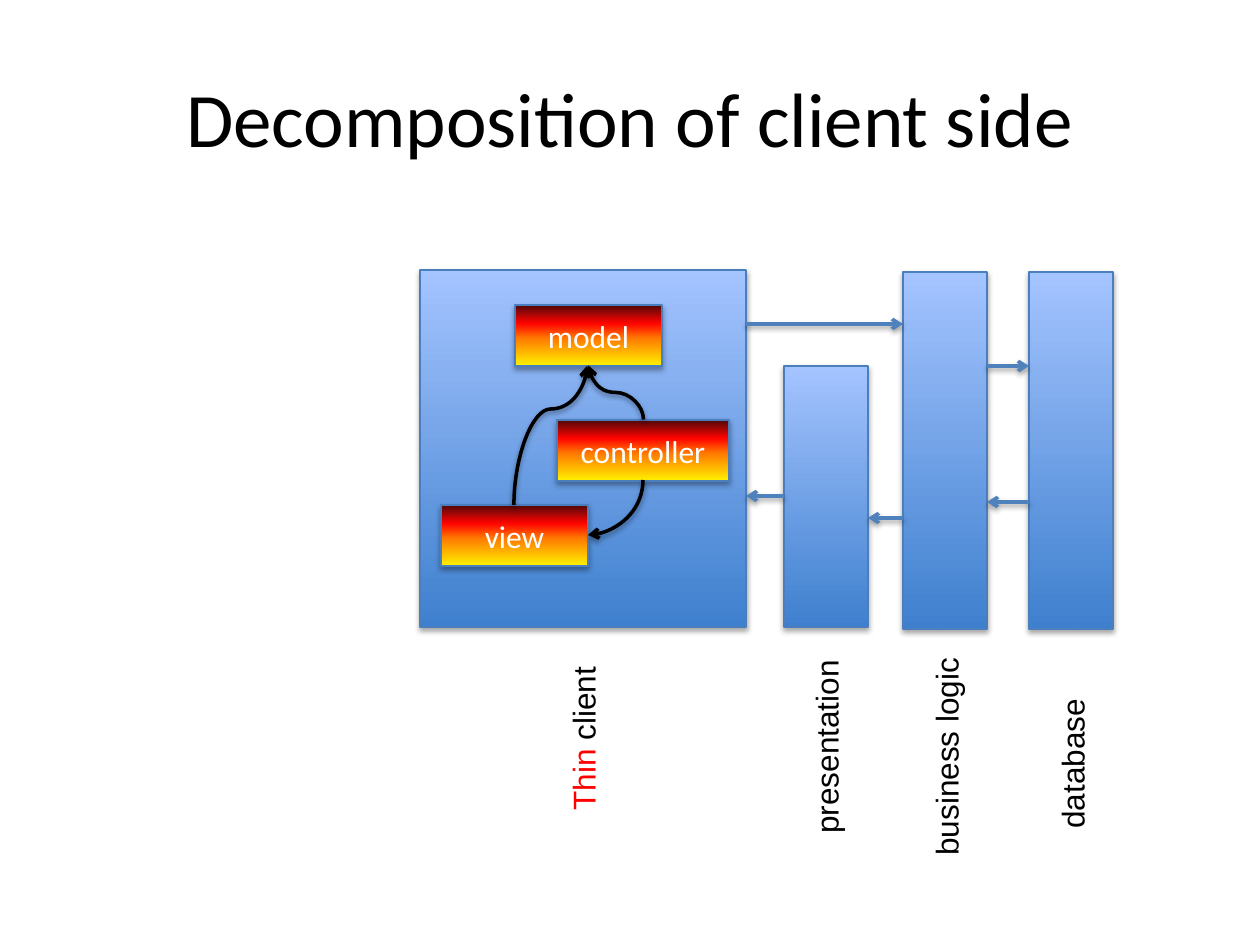
"""Builds the slide on the decomposition of the client side."""
import pptx
import pptx.dml.color
import pptx.enum.shapes
import pptx.enum.text
import pptx.oxml.ns
import pptx.util
from lxml import etree

RGB = pptx.dml.color.RGBColor
BLACK = RGB(0x00, 0x00, 0x00)
WHITE = RGB(0xFF, 0xFF, 0xFF)
RED = RGB(0xFF, 0x00, 0x00)
OUTLINE = RGB(0x4B, 0x7E, 0xBC)
ARROW_BLUE = RGB(0x4F, 0x81, 0xBD)
BLUE_STOPS = [(0, RGB(0x3F, 0x80, 0xCE)), (100, RGB(0xA4, 0xC4, 0xFF))]
FIRE_STOPS = [
    (0, RGB(0xFF, 0xF2, 0x00)),
    (45, RGB(0xFF, 0x7A, 0x00)),
    (70, RGB(0xFF, 0x03, 0x00)),
    (100, RGB(0x4D, 0x08, 0x08)),
]
CONNECTOR = pptx.enum.shapes.MSO_CONNECTOR
ALIGN = pptx.enum.text.PP_ALIGN
MIDDLE = pptx.enum.text.MSO_ANCHOR.MIDDLE


def px(length):
    """Turn whole pixels, 126 to the inch, into EMU."""
    return pptx.util.Emu(round(length * 914400 / 126))


def add_node(parent, tag, **attributes):
    """Append a drawing element with the given attributes."""
    node = etree.SubElement(parent, pptx.oxml.ns.qn("a:" + tag))
    for name, value in attributes.items():
        node.set(name, str(value))
    return node


def add_shadow(shape, alpha, distance):
    """Give a shape or connector a soft shadow straight below it."""
    effects = add_node(shape._element.spPr, "effectLst")
    shadow = add_node(effects, "outerShdw", blurRad=40000, dist=distance,
                      dir=5400000, rotWithShape=0)
    color = add_node(shadow, "srgbClr", val=BLACK)
    add_node(color, "alpha", val=alpha * 1000)


def write(frame, *spans, font="Calibri", size=18, align=None, anchor=None):
    """Write (text, colour) spans as one paragraph."""
    if anchor is not None:
        frame.vertical_anchor = anchor
    para = frame.paragraphs[0]
    if align is not None:
        para.alignment = align
    for text, color in spans:
        span = para.add_run()
        span.text = text
        span.font.name = font
        span.font.size = pptx.util.Pt(size)
        span.font.color.rgb = color


def add_box(page, left, top, width, height, stops):
    """Add a rectangle whose gradient runs from bottom to top."""
    box = page.shapes.add_shape(pptx.enum.shapes.MSO_SHAPE.RECTANGLE,
                                px(left), px(top), px(width), px(height))
    box.fill.gradient()
    box.fill.gradient_angle = 90
    stop_list = box._element.spPr.find(".//" + pptx.oxml.ns.qn("a:gsLst"))
    for old_stop in list(stop_list):
        stop_list.remove(old_stop)
    for position, color in stops:
        stop = add_node(stop_list, "gs", pos=position * 1000)
        add_node(stop, "srgbClr", val=color)
    box.line.color.rgb = OUTLINE
    box.line.width = pptx.util.Pt(0.75)
    add_shadow(box, 35, 23000)
    return box


def add_label(page, center_x, center_y, width, *spans):
    """Add a label that reads upwards around a centre point."""
    height = 50
    box = page.shapes.add_textbox(px(center_x - width / 2), px(center_y - height / 2),
                                  px(width), px(height))
    box.rotation = 270
    box.text_frame.word_wrap = False
    box.text_frame.auto_size = pptx.enum.text.MSO_AUTO_SIZE.SHAPE_TO_FIT_TEXT
    write(box.text_frame, *spans, font="Arial")


def add_arrow(page, begin, end, color=ARROW_BLUE, kind=CONNECTOR.STRAIGHT):
    """Add a connector with an open arrowhead at its end."""
    arrow = page.shapes.add_connector(kind, *map(px, begin + end))
    arrow.line.color.rgb = color
    arrow.line.width = pptx.util.Pt(2)
    add_node(arrow.line._get_or_add_ln(), "tailEnd", type="arrow")
    add_shadow(arrow, 38, 20000)
    return arrow


def add_curve(page, begin, end, rotation, preset="curvedConnector3", bend=None):
    """Add a curved arrow, with its ends given before rotation."""
    properties = add_arrow(page, begin, end, BLACK, CONNECTOR.CURVE)._element.spPr
    properties.xfrm.set("rot", str(rotation * 60000))
    geometry = properties.find(pptx.oxml.ns.qn("a:prstGeom"))
    geometry.set("prst", preset)
    if bend is not None:
        guides = geometry.find(pptx.oxml.ns.qn("a:avLst"))
        add_node(guides, "gd", name="adj1", fmla=f"val {bend * 1000}")


def main():
    """Build and save the slide."""
    deck = pptx.Presentation()
    deck.slide_width, deck.slide_height = px(1260), px(945)
    page = deck.slides.add_slide(deck.slide_layouts[5])
    title = page.shapes.title
    title.left, title.top, title.width, title.height = map(px, (63, 38, 1134, 158))
    write(title.text_frame, ("Decomposition of client side", BLACK),
          size=44, align=ALIGN.CENTER, anchor=MIDDLE)

    for bounds in [(420, 270, 326, 357), (784, 366, 84, 261),
                   (903, 272, 84, 357), (1029, 272, 84, 357)]:
        add_box(page, *bounds, BLUE_STOPS)

    add_label(page, 583, 738, 170, ("Thin", RED), (" client", BLACK))
    for center_x, center_y, width, text in [(826, 746, 200, "presentation"),
                                            (946, 755, 226, "business logic"),
                                            (1072, 763, 156, "database")]:
        add_label(page, center_x, center_y, width, (text, BLACK))

    for start, stop, height in [(746, 903, 324), (987, 1029, 366), (1029, 987, 502),
                                (903, 868, 518), (784, 746, 496)]:
        add_arrow(page, (start, height), (stop, height))

    for text, left, top, width in [("model", 515, 305, 147), ("view", 441, 505, 147),
                                   ("controller", 557, 420, 172)]:
        box = add_box(page, left, top, width, 61, FIRE_STOPS)
        write(box.text_frame, (text, WHITE), align=ALIGN.CENTER, anchor=MIDDLE)

    add_curve(page, (589, 420), (643, 365), 270)
    add_curve(page, (588, 480), (643, 535), 90, "curvedConnector2")
    add_curve(page, (620, 472), (481, 399), 90, bend=69)
    deck.save("out.pptx")


if __name__ == "__main__":
    main()
